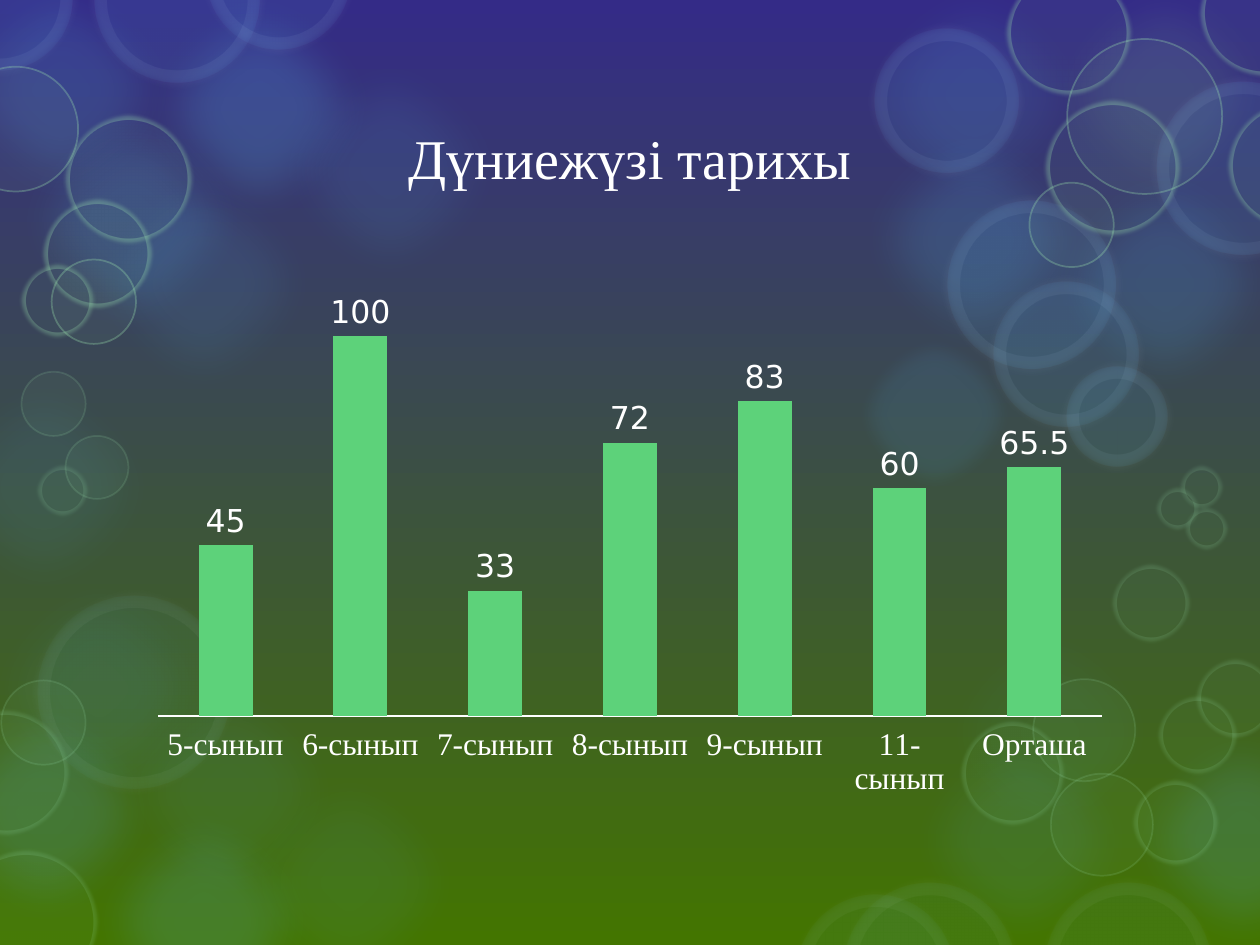
from lxml.etree import SubElement
from pptx import Presentation
from pptx.chart.data import CategoryChartData
from pptx.dml.color import RGBColor
from pptx.enum.chart import XL_CHART_TYPE, XL_LABEL_POSITION, XL_TICK_LABEL_POSITION, XL_TICK_MARK
from pptx.enum.shapes import MSO_SHAPE
from pptx.enum.text import MSO_ANCHOR, PP_ALIGN
from pptx.oxml.ns import qn
from pptx.util import Inches, Pt

TITLE = "Дүниежүзі тарихы"
SCORES = {
    "5-сынып": 45, "6-сынып": 100, "7-сынып": 33, "8-сынып": 72,
    "9-сынып": 83, "11-сынып": 60, "Орташа": 65.5,
}
COLORS = {
    "top": "342B87", "bottom": "437500", "text": "FFFFFF", "bar": "5DD27A",
    "blue": "5BBAF6", "pale": "DDF1FD", "green": "9DE3AE",
}
SERIF, SANS = "Times New Roman", "DejaVu Sans"
W, H = 10, 7.5
LEFT, WIDTH = 0.11 * W, 0.78 * W

GLOW = 2.09
GLOWS = [  # left, top, opacity in percent
    (-0.26, 4.42, 8), (0.57, 1.2, 10), (2.05, 0.31, 10), (0.57, 6.27, 16),
    (-0.56, -0.33, 14), (1.01, -0.18, 20), (0, 0.72, 15), (6.69, -0.29, 10),
    (8.2, 1.2, 15), (8.81, 5.62, 16), (7.29, 4.77, 5), (-0.69, 5.41, 16),
    (0.77, 5.24, 8), (6.69, 0.86, 15), (7.06, 5.62, 10), (1.73, 5.96, 8),
    (-0.7, 2.82, 8),
]
# (fill, opacity, line, line width, line opacity, soft edge), [(left, top, diameter)]
BUBBLES = [
    (("green", 10, None, 0, 0, 25), [(8.2, -0.33, GLOW)]),
    (("blue", 10, None, 0, 0, 10), [(6.75, 2.62, 1.33)]),
    (("blue", 10, "pale", 14, 6, 5), [
        (9.18, 0.65, 1.37), (6.94, 0.23, 1.14), (7.52, 1.59, 1.33),
        (7.89, 2.24, 1.14), (8.47, 2.91, 0.79), (0.75, -0.66, 1.31),
        (1.64, -0.75, 1.14), (-0.57, -0.58, 1.14)]),
    (("blue", 6, "pale", 14, 4, 5), [
        (0.3, 4.73, 1.53), (6.32, 7.1, 1.25), (6.7, 7.01, 1.36), (8.29, 7.01, 1.32)]),
    (("green", 5, "green", 1, 30, 0), [
        (-0.37, 0.53, 0.99), (0.41, 2.06, 0.67), (8.47, 0.31, 1.23), (8.17, 1.45, 0.67)]),
    (("green", 5, "green", 5, 30, 2.5), [
        (0.52, 0.92, 1), (0.35, 1.59, 0.85), (0.17, 2.1, 0.57), (7.99, -0.23, 0.98),
        (9.53, -0.39, 0.99), (9.75, 0.82, 0.99), (8.3, 0.8, 1.06)]),
    (("green", 5, "green", 1, 15, 0), [
        (0.01, 5.4, 0.67), (8.34, 6.14, 0.81), (8.2, 5.39, 0.81),
        (0.17, 2.95, 0.51), (0.52, 3.46, 0.5)]),
    (("green", 5, "green", 5, 15, 2.5), [
        (-0.36, 6.75, 1.13), (-0.44, 5.64, 0.98), (7.63, 5.73, 0.81), (9, 6.2, 0.66),
        (8.83, 4.48, 0.61), (9.2, 5.53, 0.61), (9.5, 5.24, 0.61), (9.37, 3.7, 0.33),
        (9.18, 3.87, 0.33), (9.41, 4.03, 0.33), (0.3, 3.7, 0.39)]),
]


def rgb(name):
    return RGBColor.from_string(COLORS[name])


def set_format(obj, **values):
    for key, value in values.items():
        setattr(obj, key, value)


def paint(fill, color):
    fill.solid()
    fill.fore_color.rgb = rgb(color)


def add_bubble(shapes, left, top, size, style):
    """A translucent circle, with a soft edge where the style has one."""
    fill, opacity, line, width, line_opacity, soft = style
    sp = shapes.add_shape(MSO_SHAPE.OVAL, *map(Inches, (left, top, size, size)))
    sp.shadow.inherit = False
    paint(sp.fill, fill)
    if line:
        sp.line.width = Pt(width)
        paint(sp.line.fill, line)
    else:
        sp.line.fill.background()
    pr = sp._element.spPr
    for clr, alpha in zip(pr.iter(qn("a:srgbClr")), (opacity, line_opacity)):
        SubElement(clr, qn("a:alpha"), val=str(alpha * 1000))
    if soft:
        SubElement(pr.find(qn("a:effectLst")), qn("a:softEdge"), rad=str(Pt(soft)))


def add_title(shapes):
    tf = shapes.add_textbox(*map(Inches, (LEFT, 0.74, WIDTH, 1.01))).text_frame
    set_format(tf, word_wrap=True, vertical_anchor=MSO_ANCHOR.MIDDLE)
    p = tf.paragraphs[0]
    p.alignment = PP_ALIGN.CENTER
    r = p.add_run()
    r.text = TITLE
    set_format(r.font, size=Pt(32), name=SERIF)
    r.font.color.rgb = rgb("text")


def add_scores(shapes):
    data = CategoryChartData()
    data.categories = list(SCORES)
    data.add_series("Series 1", list(SCORES.values()))
    box = map(Inches, (LEFT, 1.98, WIDTH, 4.43))
    chart = shapes.add_chart(XL_CHART_TYPE.COLUMN_CLUSTERED, *box, data).chart
    set_format(chart, has_legend=False, has_title=False)
    plot = chart.plots[0]
    set_format(plot, gap_width=150, vary_by_categories=False, has_data_labels=True)
    labels, axis = plot.data_labels, chart.category_axis
    set_format(labels, show_value=True, position=XL_LABEL_POSITION.OUTSIDE_END)
    set_format(axis, major_tick_mark=XL_TICK_MARK.NONE, has_major_gridlines=False,
               tick_label_position=XL_TICK_LABEL_POSITION.LOW)
    set_format(chart.value_axis, visible=False, has_major_gridlines=False,
               minimum_scale=0, maximum_scale=120)
    for font, name in ((chart.font, SANS), (labels.font, SANS), (axis.tick_labels.font, SERIF)):
        set_format(font, size=Pt(18), name=name)
        font.color.rgb = rgb("text")
    axis.format.line.color.rgb = rgb("text")
    axis.format.line.width = Pt(1)
    paint(plot.series[0].format.fill, "bar")


def main():
    prs = Presentation()
    set_format(prs, slide_width=Inches(W), slide_height=Inches(H))
    slide = prs.slides.add_slide(prs.slide_layouts[6])
    bg = slide.background.fill
    bg.gradient()
    bg.gradient_angle = 270
    for stop, color, position in zip(bg.gradient_stops, ("top", "bottom"), (0, 1)):
        stop.color.rgb = rgb(color)
        stop.position = position
    for left, top, opacity in GLOWS:
        add_bubble(slide.shapes, left, top, GLOW, ("blue", opacity, None, 0, 0, 25))
    for style, circles in BUBBLES:
        for circle in circles:
            add_bubble(slide.shapes, *circle, style)
    add_title(slide.shapes)
    add_scores(slide.shapes)
    prs.save("out.pptx")


if __name__ == "__main__":
    main()
